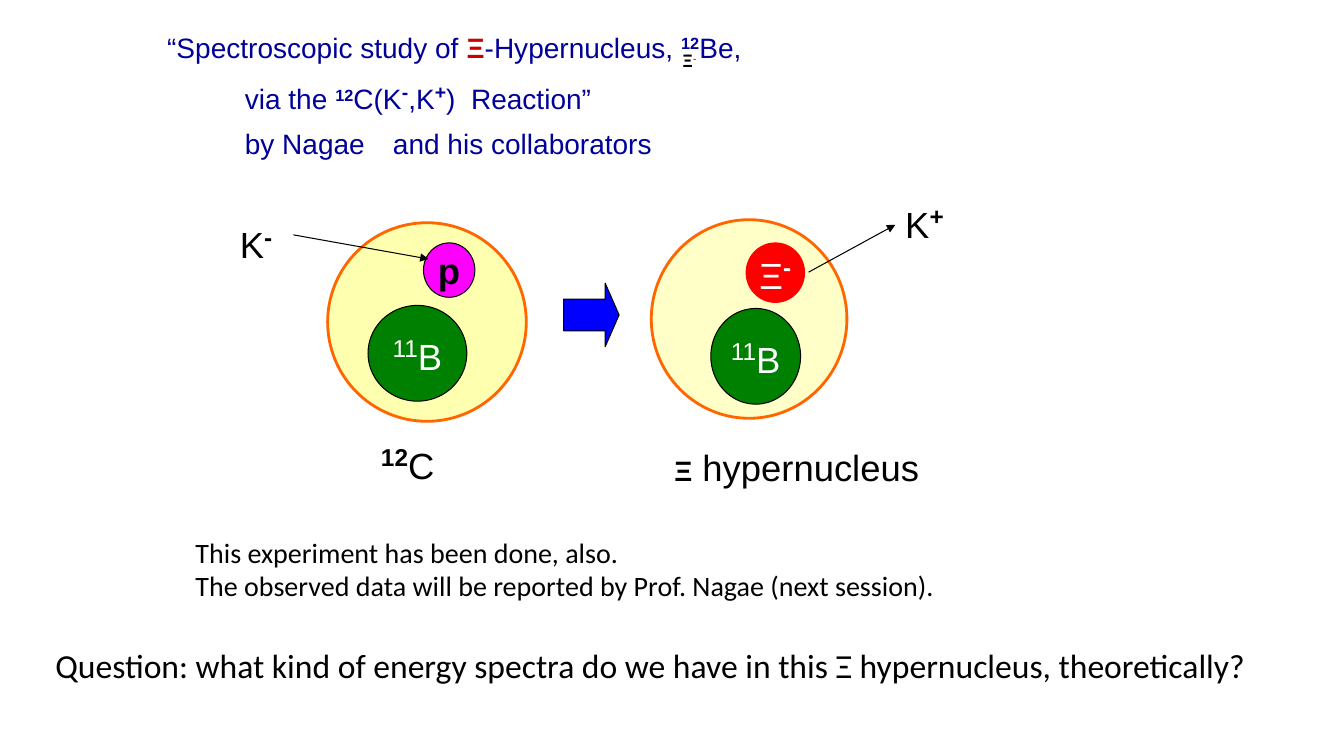
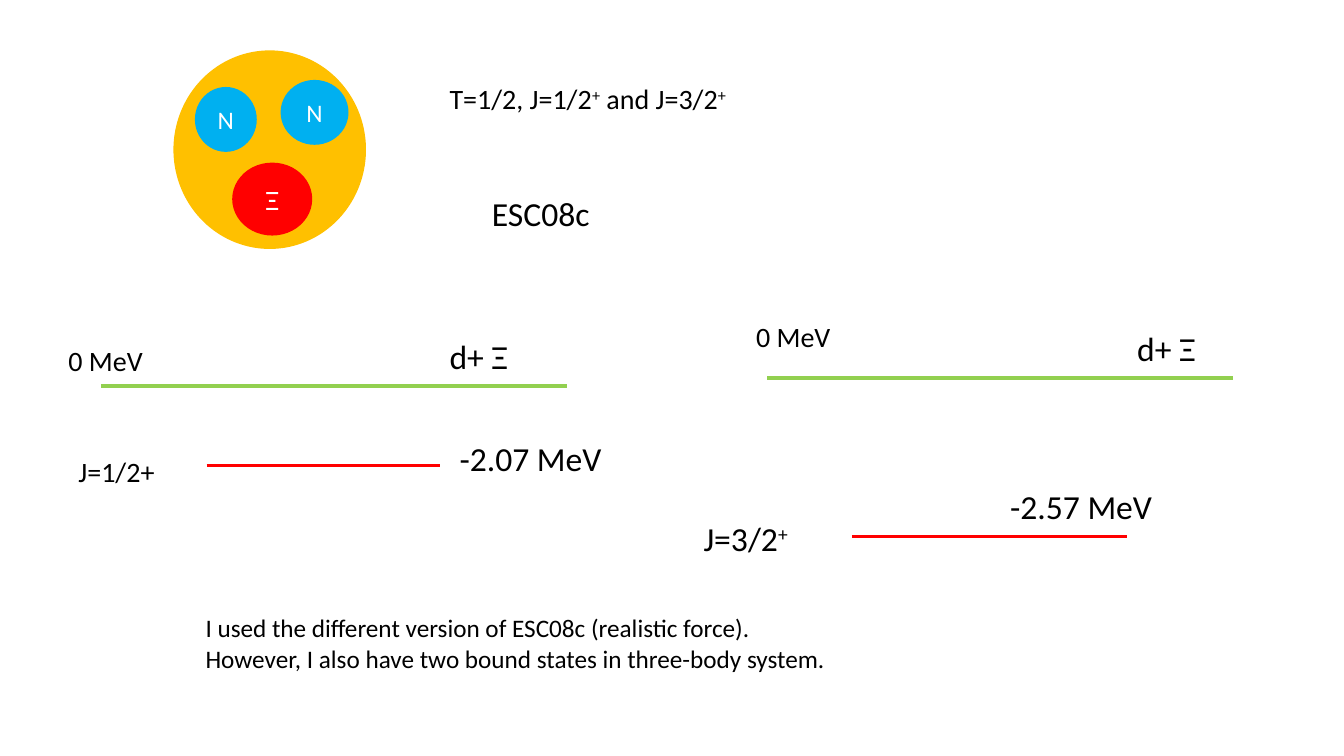
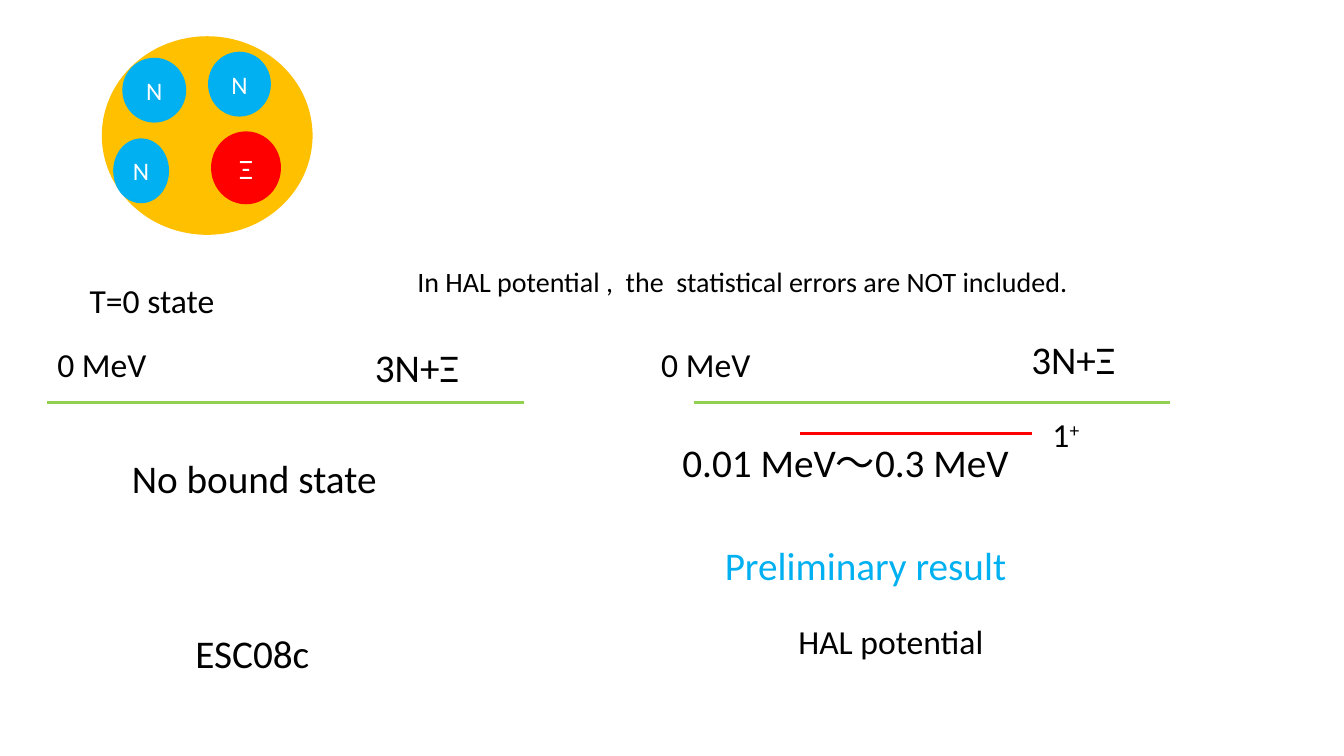
"""Build three slides on Ξ hypernuclei: the reaction and two sets of energy levels."""
from lxml import etree
from pptx import Presentation
from pptx.dml.color import RGBColor
from pptx.enum import shapes, text
from pptx.oxml import ns
from pptx.util import Inches, Pt

BLACK = RGBColor(0x00, 0x00, 0x00)
WHITE = RGBColor(0xFF, 0xFF, 0xFF)
NAVY = RGBColor(0x00, 0x00, 0x99)
BLUE = RGBColor(0x00, 0x00, 0xFF)
SKY = RGBColor(0x00, 0xB0, 0xF0)
RED = RGBColor(0xFF, 0x00, 0x00)
CRIMSON = RGBColor(0xCC, 0x00, 0x00)
ORANGE = RGBColor(0xFF, 0x66, 0x00)
GOLD = RGBColor(0xFF, 0xC0, 0x00)
YELLOW = RGBColor(0xFF, 0xFF, 0x00)
MAGENTA = RGBColor(0xFF, 0x00, 0xFF)
GREEN = RGBColor(0x00, 0x80, 0x00)
LIME = RGBColor(0x92, 0xD0, 0x50)

BODY = "Calibri"
PHYSICS = "Arial"


def sup(value, **style):
    return value, {"raised": True, **style}


def bold(value, **style):
    return value, {"bold": True, **style}


PLUS = sup("+")
BIG_MINUS = sup("-", size=30, bold=True)
BORON = [[sup("11", size=30), "B"]]

TITLE = [
    ["“Spectroscopic study of ", bold("Ξ", color=CRIMSON), "-Hypernucleus, ",
     sup("12", bold=True), "Be,"],
    ["via the ", sup("12", bold=True), "C(K", sup("-", size=24, bold=True),
     ",K", sup("+", size=24, bold=True), ")  Reaction”"],
    ["by Nagae　and his collaborators"],
]
TITLE_INDENTS = (0.15, 0.92, 0.92)

NUCLEI = [
    ((6.46, 2.18, 1.94, 1.97), 22),
    ((3.25, 2.21, 1.97, 1.97), 31),
]
PARTICLES = [
    ((3.65, 3.03, 0.98, 0.95), GREEN, BLACK, BORON, WHITE),
    ((4.2, 2.41, 0.51, 0.54), MAGENTA, BLACK, [[bold("p")]], BLACK),
    ((7.4, 2.41, 0.58, 0.59), RED, RED, [["Ξ", BIG_MINUS]], WHITE),
    ((7.05, 3.06, 0.89, 0.95), GREEN, BLACK, BORON, WHITE),
]
KAON_PATHS = [((2.91, 2.33), (4.25, 2.57)), ((8.02, 2.7), (8.88, 2.23))]
REACTION_LABELS = [
    ((2.28, 2.1, 0.54, 0.54), [["K", BIG_MINUS]]),
    ((8.88, 1.9, 0.61, 0.54), [["K", sup("+", size=30, bold=True)]]),
    ((3.68, 4.29, 0.78, 0.54), [[sup("12", size=30, bold=True), "C"]]),
    ((6.59, 4.37, 2.66, 0.54), [[bold("Ξ", size=20), " hypernucleus"]]),
]
REMARKS = [
    ((1.84, 5.26, 7.71, 0.77), 20,
     [["This experiment has been done, also."],
      ["The observed data will be reported by Prof. Nagae (next session)."]]),
    ((0.45, 6.35, 12.19, 0.5), 24,
     [["Question: what kind of energy spectra do we have in this Ξ hypernucleus, theoretically?"]]),
]

LEVEL_PAGES = [
    {
        "nucleus": (1.72, 0.5, 1.91, 1.97),
        "nucleons": [(1.94, 0.87, 0.6, 0.63), (2.79, 0.8, 0.66, 0.63)],
        "xi": (2.31, 1.62, 0.78, 0.71),
        "threshold_weight": 3,
        "thresholds": [(1, 5.62, 3.83), (7.61, 12.23, 3.75)],
        "states": [(2.05, 4.36, 4.62), (8.45, 11.18, 5.32)],
        "labels": [
            ((4.36, 0.76, 2.99, 0.44), 20, [["T=1/2, J=1/2", PLUS, " and J=3/2", PLUS]]),
            ((4.78, 1.86, 1.18, 0.5), 24, [["ESC08c"]]),
            ((0.58, 3.36, 0.95, 0.44), 20, [["0 MeV"]]),
            ((4.36, 3.28, 0.79, 0.5), 24, [["d+ Ξ"]]),
            ((0.68, 4.46, 0.96, 0.44), 20, [["J=1/2+"]]),
            ((4.46, 4.3, 1.62, 0.5), 24, [["-2.07 MeV"]]),
            ((7.4, 3.12, 0.95, 0.44), 20, [["0 MeV"]]),
            ((11.18, 3.2, 0.79, 0.5), 24, [["d+ Ξ"]]),
            ((6.88, 5.09, 1.06, 0.5), 24, [["J=3/2", PLUS]]),
            ((9.92, 4.77, 1.62, 0.5), 24, [["-2.57 MeV"]]),
            ((1.94, 6.03, 6.42, 0.71), 18,
             [["I used the different version of ESC08c (realistic force)."],
              ["However, I also have two bound states in three-body system."]]),
        ],
    },
    {
        "nucleus": (1.01, 0.36, 2.09, 1.97),
        "nucleons": [(2.07, 0.52, 0.61, 0.63), (1.22, 0.58, 0.62, 0.63),
                     (1.13, 1.38, 0.54, 0.63)],
        "xi": (2.1, 1.31, 0.68, 0.71),
        "threshold_weight": 2.25,
        "thresholds": [(0.47, 5.2, 3.99), (6.88, 11.6, 3.99)],
        "states": [(7.93, 10.24, 4.3)],
        "labels": [
            ((0.79, 2.73, 1.45, 0.5), 24, [["T=0 state"]]),
            ((4.04, 2.57, 6.85, 0.44), 20,
             [["In HAL potential ,  the  statistical errors are NOT included."]]),
            ((0.47, 3.36, 1.09, 0.5), 24, [["0 MeV"]]),
            ((3.62, 3.36, 1.05, 0.57), 28, [["3N+Ξ"]]),
            ((1.21, 4.46, 2.66, 0.57), 28, [["No bound state"]]),
            ((1.84, 6.19, 1.43, 0.57), 28, [["ESC08c"]]),
            ((6.46, 3.36, 1.09, 0.5), 24, [["0 MeV"]]),
            ((10.13, 3.28, 1.05, 0.57), 28, [["3N+Ξ"]]),
            ((10.34, 4.06, 0.48, 0.5), 24, [["1", PLUS]]),
            ((6.67, 4.3, 3.48, 1.04), 28, [["0.01 MeV～0.3 MeV"]], {"wrap": True}),
            ((7.09, 5.32, 3.02, 0.57), 28, [["Preliminary result"]], {"color": SKY}),
            ((7.82, 6.11, 2.13, 0.5), 24, [["HAL potential"]]),
        ],
    },
]


def write(frame, paragraphs, size=20, font=BODY, color=BLACK, wrap=False,
          align=None, spacing=None, indents=()):
    frame.word_wrap = wrap
    for index, spans in enumerate(paragraphs):
        para = frame.paragraphs[0] if index == 0 else frame.add_paragraph()
        para.alignment = align
        para.line_spacing = spacing
        if indents:
            para._p.get_or_add_pPr().set("marL", str(Inches(indents[index])))
        for item in spans:
            value, style = (item, {}) if isinstance(item, str) else item
            span = para.add_run()
            span.text = value
            span.font.name = style.get("font", font)
            span.font.size = Pt(style.get("size", size))
            span.font.bold = style.get("bold", False)
            span.font.color.rgb = style.get("color", color)
            if style.get("raised"):
                span.font._element.set("baseline", "30000")


def add_label(page, place, paragraphs, **style):
    box = page.shapes.add_textbox(*map(Inches, place))
    write(box.text_frame, paragraphs, **style)
    box.text_frame.auto_size = text.MSO_AUTO_SIZE.SHAPE_TO_FIT_TEXT


def add_figure(page, place, fill, outline=None, weight=1, opacity=None,
               kind=shapes.MSO_SHAPE.OVAL):
    figure = page.shapes.add_shape(kind, *map(Inches, place))
    figure.shadow.inherit = False
    figure.fill.solid()
    figure.fill.fore_color.rgb = fill
    if opacity is not None:
        shade = figure._element.spPr.find(".//" + ns.qn("a:srgbClr"))
        etree.SubElement(shade, ns.qn("a:alpha")).set("val", str(opacity * 1000))
    if outline is None:
        figure.line.fill.background()
    else:
        figure.line.color.rgb = outline
        figure.line.width = Pt(weight)
    return figure


def add_particle(page, place, fill, outline, paragraphs, weight=1, **style):
    particle = add_figure(page, place, fill, outline, weight)
    particle.text_frame.vertical_anchor = text.MSO_ANCHOR.MIDDLE
    write(particle.text_frame, paragraphs, align=text.PP_ALIGN.CENTER, **style)


def add_line(page, start, end, color, weight, arrow=False):
    line = page.shapes.add_connector(
        shapes.MSO_CONNECTOR.STRAIGHT, *map(Inches, (*start, *end)))
    line.line.color.rgb = color
    line.line.width = Pt(weight)
    if arrow:
        etree.SubElement(line.line._get_or_add_ln(), ns.qn("a:tailEnd")).set("type", "triangle")
    etree.SubElement(line._element.spPr, ns.qn("a:effectLst"))


def build_reaction(page):
    for place, opacity in NUCLEI:
        add_figure(page, place, YELLOW, ORANGE, 2, opacity)
    for place, fill, outline, symbol, color in PARTICLES:
        add_particle(page, place, fill, outline, symbol, weight=0.75,
                     size=26, font=PHYSICS, color=color)
    for start, end in KAON_PATHS:
        add_line(page, start, end, BLACK, 0.75, arrow=True)
    arrow = add_figure(page, (5.59, 2.81, 0.55, 0.63), BLUE, BLACK, 0.75,
                       kind=shapes.MSO_SHAPE.RIGHT_ARROW)
    arrow.adjustments[1] = 0.25
    for place, paragraphs in REACTION_LABELS:
        add_label(page, place, paragraphs, size=26, font=PHYSICS)
    add_label(page, (1.41, 0.15, 11.5, 1.41), TITLE, font=PHYSICS, color=NAVY,
              wrap=True, spacing=1.3, indents=TITLE_INDENTS)
    add_label(page, (6.67, 0.45, 0.43, 0.3), [[bold("Ξ"), sup("-")]],
              size=12, font="Noto Sans CJK JP")
    for place, size, paragraphs in REMARKS:
        add_label(page, place, paragraphs, size=size)


def build_levels(page, content):
    add_figure(page, content["nucleus"], GOLD)
    for place in content["nucleons"]:
        add_particle(page, place, SKY, SKY, [["N"]], size=18, color=WHITE)
    add_particle(page, content["xi"], RED, RED, [["Ξ"]], size=20, color=WHITE)
    for group, color, weight in (("thresholds", LIME, content["threshold_weight"]),
                                 ("states", RED, 2.25)):
        for left, right, height in content[group]:
            add_line(page, (left, height), (right, height), color, weight)
    for place, size, paragraphs, *style in content["labels"]:
        add_label(page, place, paragraphs, size=size, **(style[0] if style else {}))


def main():
    deck = Presentation()
    deck.slide_width, deck.slide_height = Inches(13.33), Inches(7.5)
    blank = deck.slide_layouts[6]
    build_reaction(deck.slides.add_slide(blank))
    for content in LEVEL_PAGES:
        build_levels(deck.slides.add_slide(blank), content)
    deck.save("out.pptx")


if __name__ == "__main__":
    main()
